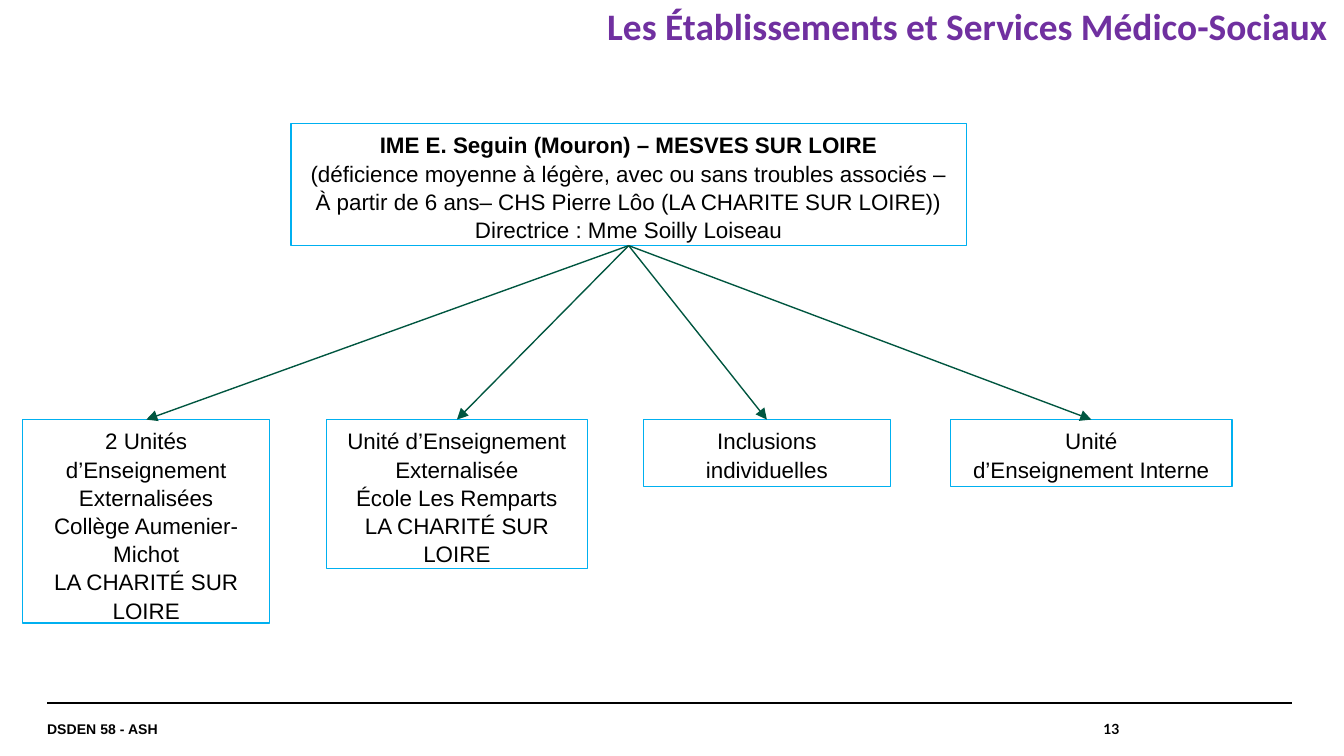
from dataclasses import dataclass

from lxml import etree
from pptx import Presentation
from pptx.dml.color import RGBColor
from pptx.enum.shapes import MSO_CONNECTOR, MSO_SHAPE
from pptx.enum.text import MSO_ANCHOR, MSO_AUTO_SIZE, PP_ALIGN
from pptx.oxml.ns import qn
from pptx.shapes.autoshape import Shape
from pptx.shapes.connector import Connector
from pptx.slide import Slide
from pptx.util import Pt

STRAIGHT = MSO_CONNECTOR.STRAIGHT
RECTANGLE = MSO_SHAPE.RECTANGLE
LEFT, CENTER, RIGHT = PP_ALIGN.LEFT, PP_ALIGN.CENTER, PP_ALIGN.RIGHT
TOP, MIDDLE = MSO_ANCHOR.TOP, MSO_ANCHOR.MIDDLE
FIT_SHAPE = MSO_AUTO_SIZE.SHAPE_TO_FIT_TEXT

BLACK = RGBColor(0x00, 0x00, 0x00)
PURPLE = RGBColor(0x70, 0x30, 0xA0)
SKY_BLUE = RGBColor(0x00, 0xB0, 0xF0)
DARK_GREEN = RGBColor(0x00, 0x56, 0x40)

BOTTOM_SIDE, TOP_SIDE = 2, 0
UNIT_TOP = 224.8
FOOTER_TOP, FOOTER_HEIGHT = 376.6, 28


@dataclass
class Box:
    left: float
    top: float
    width: float
    height: float
    lines: list[str]
    bold_lines: int = 0


INSTITUTE = Box(155.9, 66.2, 361.8, 65.4, [
    "IME E. Seguin (Mouron) – MESVES SUR LOIRE",
    "(déficience moyenne à légère, avec ou sans troubles associés –",
    "À partir de 6 ans– CHS Pierre Lôo (LA CHARITE SUR LOIRE))",
    "Directrice : Mme Soilly Loiseau",
], bold_lines=1)

UNITS = [
    Box(12.2, UNIT_TOP, 132.3, 109, [
        "2 Unités d’Enseignement Externalisées",
        "Collège Aumenier-Michot",
        "LA CHARITÉ SUR LOIRE",
    ]),
    Box(174.9, UNIT_TOP, 139.8, 80, [
        "Unité d’Enseignement Externalisée",
        "École Les Remparts",
        "LA CHARITÉ SUR LOIRE",
    ]),
    Box(344.7, UNIT_TOP, 132.3, 36, ["Inclusions", "individuelles"]),
    Box(509.2, UNIT_TOP, 150.9, 36, ["Unité", "d’Enseignement Interne"]),
]


def write_text(shape: Shape, lines: list[str], *, size: float, font: str = "Arial",
               color: RGBColor = BLACK, bold_lines: int = 1,
               align: PP_ALIGN = LEFT, anchor: MSO_ANCHOR = TOP,
               spacing: float = 1.0) -> None:
    frame = shape.text_frame
    frame.word_wrap = True
    frame.vertical_anchor = anchor
    frame.text = "\n".join(lines)
    for index, paragraph in enumerate(frame.paragraphs):
        paragraph.alignment = align
        paragraph.line_spacing = spacing
        paragraph.font.name = font
        paragraph.font.size = Pt(size)
        paragraph.font.bold = index < bold_lines
        paragraph.font.color.rgb = color


def add_label(slide: Slide, left: float, top: float, width: float, height: float,
              text: str, **text_format) -> None:
    shape = slide.shapes.add_textbox(Pt(left), Pt(top), Pt(width), Pt(height))
    frame = shape.text_frame
    frame.margin_left = frame.margin_right = frame.margin_top = frame.margin_bottom = 0
    write_text(shape, [text], **text_format)


def add_box(slide: Slide, box: Box) -> Shape:
    shape = slide.shapes.add_shape(
        RECTANGLE, Pt(box.left), Pt(box.top), Pt(box.width), Pt(box.height))
    shape.shadow.inherit = False
    shape.fill.background()
    shape.line.color.rgb = SKY_BLUE
    shape.line.width = Pt(0.75)
    write_text(shape, box.lines, size=12, bold_lines=box.bold_lines,
               align=CENTER, spacing=1.05)
    shape.text_frame.auto_size = FIT_SHAPE
    return shape


def add_line(slide: Slide, left: float, top: float, right: float, bottom: float,
             color: RGBColor, width: float) -> Connector:
    line = slide.shapes.add_connector(STRAIGHT, Pt(left), Pt(top), Pt(right), Pt(bottom))
    line.line.color.rgb = color
    line.line.width = Pt(width)
    etree.SubElement(line._element.spPr, qn("a:effectLst"))
    return line


def add_arrow(slide: Slide, parent: Shape, child: Shape) -> None:
    arrow = add_line(slide, 0, 0, 0, 0, DARK_GREEN, 0.75)
    arrow.begin_connect(parent, BOTTOM_SIDE)
    arrow.end_connect(child, TOP_SIDE)
    etree.SubElement(arrow.line._get_or_add_ln(), qn("a:tailEnd"), type="triangle")


def main() -> None:
    presentation = Presentation()
    presentation.slide_width, presentation.slide_height = Pt(720), Pt(405)
    slide = presentation.slides.add_slide(presentation.slide_layouts[6])

    # Footer
    add_line(slide, 25.2, FOOTER_TOP, 692, FOOTER_TOP, BLACK, 0.8)
    add_label(slide, 25.2, FOOTER_TOP, 459.4, FOOTER_HEIGHT, "DSDEN 58 - ASH",
              size=7.5, anchor=MIDDLE)
    add_label(slide, 493.2, FOOTER_TOP, 106.6, FOOTER_HEIGHT, "13",
              size=7.5, font="Lato", align=RIGHT, anchor=MIDDLE)

    # Title
    add_label(slide, 280.8, 4.3, 430.4, 22.3,
              "Les Établissements et Services Médico-Sociaux",
              size=20, font="Calibri", color=PURPLE, align=RIGHT, spacing=0.9)

    # Institute and its units
    institute = add_box(slide, INSTITUTE)
    units = [add_box(slide, unit) for unit in UNITS]
    for unit in units:
        add_arrow(slide, institute, unit)

    presentation.save("out.pptx")


if __name__ == "__main__":
    main()
